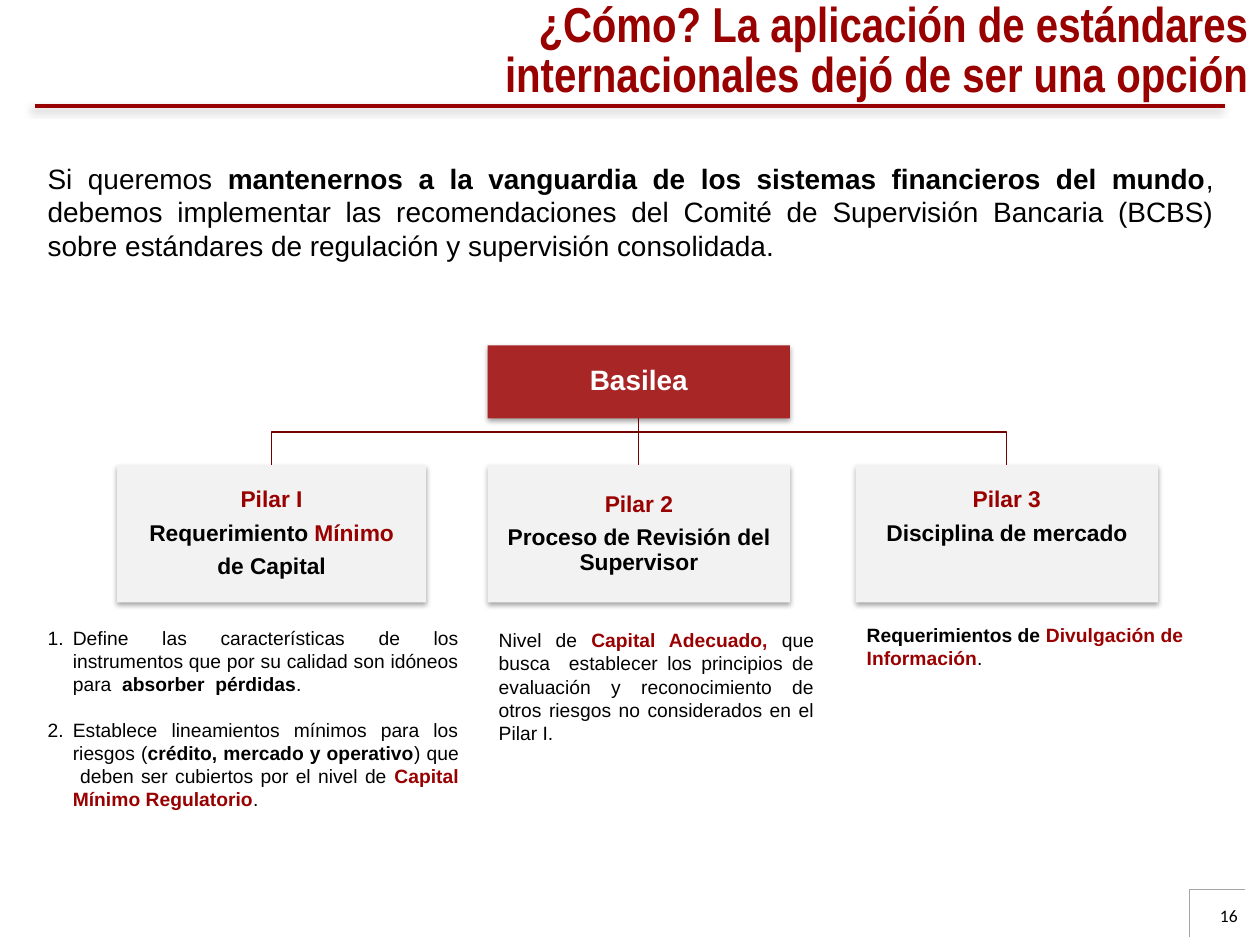
from lxml import etree
from pptx import Presentation
from pptx.dml.color import RGBColor
from pptx.enum.shapes import MSO_CONNECTOR as Connector, MSO_SHAPE as Shape
from pptx.enum.text import MSO_ANCHOR as Anchor, PP_ALIGN as Align
from pptx.oxml.ns import qn
from pptx.util import Inches, Pt

COLORS = {
    "red": "990000",
    "box_red": "A82626",
    "branch": "730000",
    "box_gray": "F2F2F2",
    "corner": "A6A6A6",
    "black": "000000",
    "white": "FFFFFF",
}
BOX_SHADOW = (35, 3.1, 1.8, 90)
RULE_SHADOW = (40, 4, 3, 135)

ROOT = (3.87, 2.74, 2.4, 0.58)
PILLAR_TOP, PILLAR_HEIGHT, BRANCH_Y = 3.69, 1.09, 3.43
LINE_PITCH = 0.26

# Each paragraph is a list of runs: (text, color, bold)
PILLARS = [
    (0.93, 2.45, 0, [
        [("Pilar I", "red", True)],
        [("Requerimiento ", "black", True), ("Mínimo", "red", True)],
        [("de Capital", "black", True)],
    ]),
    (3.87, 2.4, 0, [
        [("Pilar 2", "red", True)],
        [("Proceso de Revisión del Supervisor", "black", True)],
    ]),
    (6.79, 2.4, LINE_PITCH, [
        [("Pilar 3", "red", True)],
        [("Disciplina de mercado", "black", True)],
    ]),
]
TITLE = [[("¿Cómo? La aplicación de estándares internacionales dejó de ser una opción",
           "red", True)]]
INTRO = [[
    ("Si queremos ", "black", False),
    ("mantenernos a la vanguardia de los sistemas financieros del mundo", "black", True),
    (", debemos implementar las recomendaciones del Comité de Supervisión Bancaria (BCBS) "
     "sobre estándares de regulación y supervisión consolidada.", "black", False),
]]
CAPITAL_POINTS = [
    [("Define las características de los instrumentos que por su calidad son idóneos para  ",
      "black", False),
     ("absorber  pérdidas", "black", True), (".", "black", False)],
    [("Establece lineamientos mínimos para los riesgos (", "black", False),
     ("crédito, mercado y operativo", "black", True),
     (") que  deben ser cubiertos por el nivel de ", "black", False),
     ("Capital Mínimo Regulatorio", "red", True), (".", "black", False)],
]
REVIEW_NOTE = [[
    ("Nivel de ", "black", False), ("Capital Adecuado, ", "red", True),
    ("que busca  establecer los principios de evaluación y reconocimiento de otros riesgos "
     "no considerados en el Pilar I.", "black", False),
]]
MARKET_NOTE = [[
    ("Requerimientos de ", "black", True), ("Divulgación de Información", "red", True),
    (".", "black", False),
]]


def rgb(name):
    return RGBColor.from_string(COLORS[name])


def add_shadow(shape, opacity, blur, distance, angle):
    properties = shape._element.spPr
    effects = properties.find(qn("a:effectLst"))
    if effects is None:
        effects = etree.SubElement(properties, qn("a:effectLst"))
    shadow = etree.SubElement(
        effects, qn("a:outerShdw"), blurRad=str(Pt(blur)), dist=str(Pt(distance)),
        dir=str(angle * 60000), rotWithShape="0")
    color = etree.SubElement(shadow, qn("a:srgbClr"), val=COLORS["black"])
    etree.SubElement(color, qn("a:alpha"), val=str(opacity * 1000))


def number_paragraph(paragraph):
    properties = paragraph._p.get_or_add_pPr()
    properties.set("marL", str(Inches(0.2)))
    properties.set("indent", str(Inches(-0.2)))
    etree.SubElement(properties, qn("a:buFont"), typeface="+mj-lt")
    etree.SubElement(properties, qn("a:buAutoNum"), type="arabicPeriod")


def write_text(frame, paragraphs, size, align, font="Arial", line_spacing=None,
               gap=0, numbered=False):
    """Fill a text frame; gap is the space in points between paragraphs."""
    frame.word_wrap = True
    for index, runs in enumerate(paragraphs):
        paragraph = frame.add_paragraph() if index else frame.paragraphs[0]
        if numbered:
            number_paragraph(paragraph)
        paragraph.alignment = align
        if line_spacing:
            paragraph.line_spacing = line_spacing
        if index and gap:
            paragraph.space_before = Pt(gap)
        paragraph.font.name = font
        paragraph.font.size = Pt(size)
        for text, color, bold in runs:
            run = paragraph.add_run()
            run.text = text
            run.font.bold = bold
            run.font.color.rgb = rgb(color)


def add_text(slide, place, paragraphs, size, align, anchor=Anchor.TOP, **style):
    frame = slide.shapes.add_textbox(*map(Inches, place)).text_frame
    frame.vertical_anchor = anchor
    write_text(frame, paragraphs, size, align, **style)


def add_box(slide, place, fill, paragraphs, size, extra_bottom=0):
    box = slide.shapes.add_shape(Shape.RECTANGLE, *map(Inches, place))
    box.fill.solid()
    box.fill.fore_color.rgb = rgb(fill)
    box.line.fill.background()
    box.shadow.inherit = False
    add_shadow(box, *BOX_SHADOW)
    frame = box.text_frame
    frame.margin_left = frame.margin_right = frame.margin_top = Inches(0.01)
    frame.margin_bottom = Inches(0.01 + extra_bottom)
    frame.vertical_anchor = Anchor.MIDDLE
    write_text(frame, paragraphs, size, Align.CENTER, line_spacing=0.9, gap=5)
    return box


def add_line(slide, start, end, color, width):
    line = slide.shapes.add_connector(
        Connector.STRAIGHT, *map(Inches, (*start, *end)))
    line.line.color.rgb = rgb(color)
    line.line.width = Pt(width)
    etree.SubElement(line._element.spPr, qn("a:effectLst"))
    return line


def add_branch(slide, start, end):
    """Draw a bent line that runs down, across and down again."""
    (x1, y1), (x2, y2) = start, end
    builder = slide.shapes.build_freeform(Inches(x1), Inches(y1))
    corners = [(x1, BRANCH_Y), (x2, BRANCH_Y), (x2, y2)]
    builder.add_line_segments([(Inches(x), Inches(y)) for x, y in corners], close=False)
    branch = builder.convert_to_shape()
    branch.fill.background()
    branch.line.color.rgb = rgb("branch")
    branch.line.width = Pt(0.75)
    branch.shadow.inherit = False


def add_pillar_tree(slide):
    left, top, width, height = ROOT
    start = (left + width / 2, top + height)
    root = add_box(slide, ROOT, "box_red", [[("Basilea", "white", True)]], 16)
    for left, width, extra_bottom, paragraphs in PILLARS:
        end = (left + width / 2, PILLAR_TOP)
        pillar = add_box(slide, (left, PILLAR_TOP, width, PILLAR_HEIGHT), "box_gray",
                         paragraphs, 13, extra_bottom)
        if end[0] == start[0]:
            trunk = add_line(slide, start, end, "branch", 0.75)
            trunk.begin_connect(root, 2)
            trunk.end_connect(pillar, 0)
        else:
            add_branch(slide, start, end)


def add_frame(slide):
    """Add the title rule and the page number corner."""
    rule = add_line(slide, (0.28, 0.84), (9.72, 0.84), "red", 2)
    add_shadow(rule, *RULE_SHADOW)
    for end in ((9.88, 7.06), (9.44, 7.44)):
        add_line(slide, (9.44, 7.06), end, "corner", 0.25)
    add_text(slide, (9.3, 7.13, 0.62, 0.4), [[("16", "black", False)]], 10,
             Align.RIGHT, font="Calibri")


def main():
    presentation = Presentation()
    presentation.slide_width, presentation.slide_height = Inches(10), Inches(7.5)
    slide = presentation.slides.add_slide(presentation.slide_layouts[6])
    add_frame(slide)
    add_text(slide, (2.87, 0.02, 7.13, 0.79), TITLE, 28, Align.RIGHT, Anchor.MIDDLE,
             font="Arial Narrow", line_spacing=0.85)
    add_text(slide, (0.28, 1.23, 9.45, 0.91), INTRO, 16, Align.JUSTIFY)
    add_pillar_tree(slide)
    add_text(slide, (0.28, 4.92, 3.46, 1.58), CAPITAL_POINTS, 11, Align.JUSTIFY,
             gap=13, numbered=True)
    add_text(slide, (3.86, 4.94, 2.7, 1.03), REVIEW_NOTE, 11, Align.JUSTIFY)
    add_text(slide, (6.78, 4.9, 2.95, 0.47), MARKET_NOTE, 11, Align.LEFT)
    presentation.save("out.pptx")


if __name__ == "__main__":
    main()
